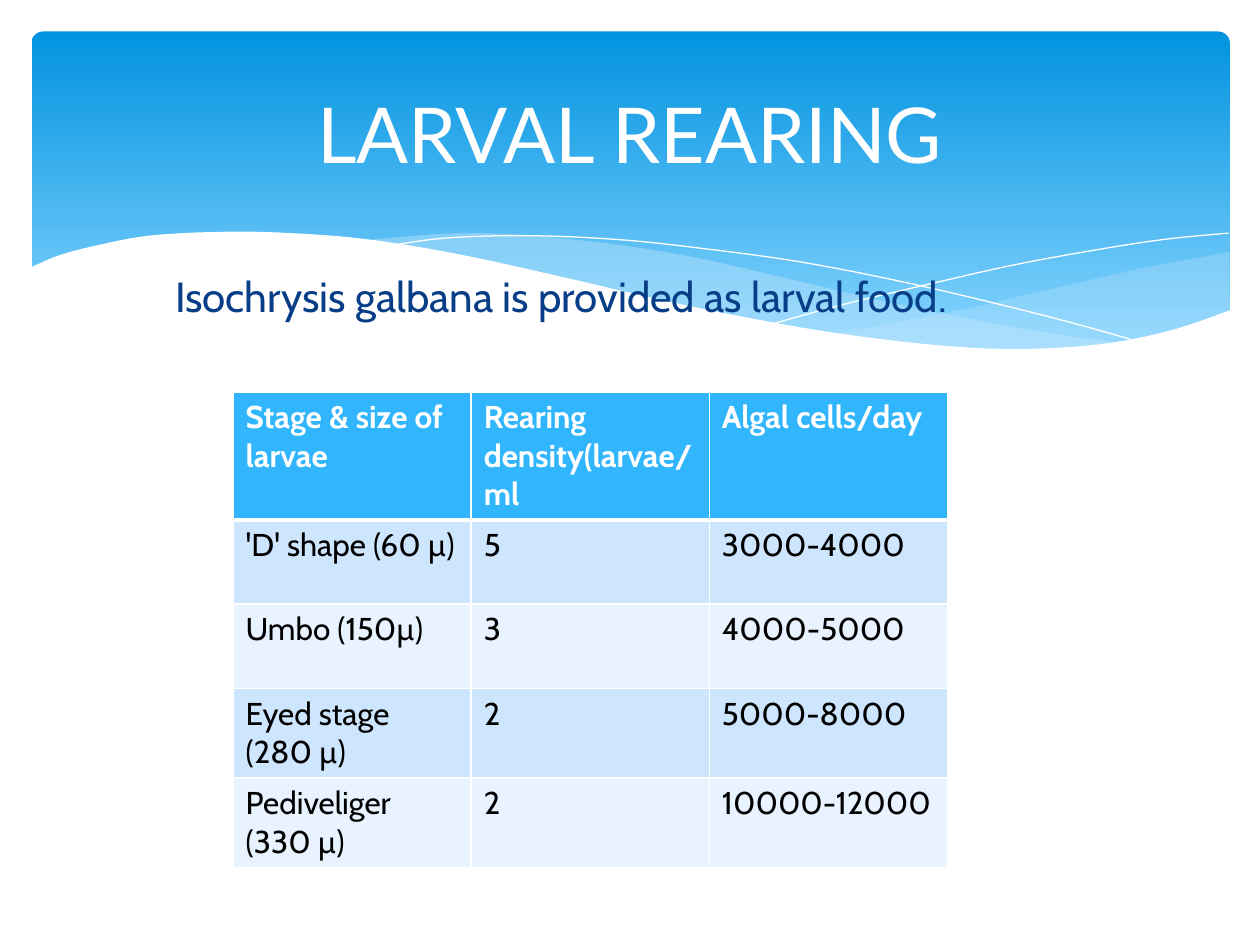
from lxml.etree import SubElement
from pptx import Presentation
from pptx.dml.color import RGBColor
from pptx.enum.shapes import MSO_SHAPE
from pptx.enum.text import MSO_ANCHOR, MSO_AUTO_SIZE, PP_ALIGN
from pptx.oxml.ns import qn
from pptx.util import Inches, Pt

WHITE = RGBColor(0xFF, 0xFF, 0xFF)
BLACK = RGBColor(0, 0, 0)
NAVY = RGBColor(0x07, 0x3E, 0x87)
SKY_DARK = RGBColor(0x02, 0x93, 0xE0)
SKY_LIGHT = RGBColor(0x83, 0xD3, 0xFE)
MIST = RGBColor(0xC6, 0xE7, 0xFC)
HEADER = RGBColor(0x31, 0xB6, 0xFD)
BANDS = (RGBColor(0xE8, 0xF3, 0xFF), RGBColor(0xCE, 0xE5, 0xFE))

TITLE_FONT = {"name": "Lato", "size": Pt(44), "bold": False}
BODY_FONT = {"name": "Cabin", "size": Pt(24), "bold": False}
HEAD_FONT = {"name": "Cabin", "size": Pt(18), "bold": True}
CELL_FONT = {"name": "Cabin", "size": Pt(18), "bold": False}

# Each wave is a list of smooth edges, given by the points they pass through.
RIGHT_WAVE = [
    [(9.76, 2), (9.06, 2.13), (8.32, 2.3), (7.53, 2.48), (6.61, 2.65)],
    [(6.61, 2.65), (7.05, 2.71), (7.57, 2.76), (8.14, 2.78), (8.72, 2.74),
     (9.28, 2.63), (9.76, 2.47)],
]
MIDDLE_WAVE = [
    [(8.93, 2.73), (8.07, 2.6), (7.06, 2.4), (6.29, 2.22), (5.55, 2.05),
     (4.89, 1.94), (4.2, 1.87), (3.61, 1.85), (2.86, 1.91)],
    [(2.86, 1.91), (3.62, 2.03), (4.49, 2.22), (5.3, 2.4), (6.01, 2.55),
     (6.65, 2.66), (7.36, 2.75), (7.96, 2.78), (8.48, 2.77), (8.93, 2.73)],
]
FALLING_LINE = [
    [(3.09, 1.95), (3.53, 1.89), (4.16, 1.87), (4.89, 1.9), (5.56, 1.97),
     (6.36, 2.08), (7.27, 2.26), (8.31, 2.51), (9.07, 2.72)],
]
RISING_LINE = [
    [(6.13, 2.57), (6.72, 2.41), (7.48, 2.23), (8.06, 2.1), (8.66, 1.99),
     (9.24, 1.9), (9.75, 1.85)],
]
FRONT_WAVE = [
    [(9.77, 2.46), (9.3, 2.62), (8.75, 2.73), (8.09, 2.77), (7.44, 2.74),
     (6.68, 2.65), (6.03, 2.54), (5.29, 2.39), (4.47, 2.2), (3.65, 2.02),
     (2.92, 1.9), (2.3, 1.85), (1.77, 1.84), (1.19, 1.87), (0.76, 1.95),
     (0.46, 2.03), (0.23, 2.13)],
    [(0.23, 3.29), (9.77, 3.29)],
]

ROWS = [
    ("Stage & size of larvae", "Rearing density(larvae/ml", "Algal cells/day"),
    ("'D' shape (60 µ)", "5", "3000-4000"),
    ("Umbo (150µ)", "3", "4000-5000"),
    ("Eyed stage (280 µ)", "2", "5000-8000"),
    ("Pediveliger (330 µ)", "2", "10000-12000"),
]


def smooth(knots, steps=6):
    """Points of a Catmull-Rom curve through the knots."""
    ends = [knots[0], *knots, knots[-1]]
    points = [knots[0]]
    for quad in zip(ends, ends[1:], ends[2:], ends[3:]):
        for t in (i / steps for i in range(1, steps + 1)):
            points.append(tuple(
                (2 * b + (c - a) * t + (2 * a - 5 * b + 4 * c - d) * t ** 2
                 + (3 * b - a - 3 * c + d) * t ** 3) / 2
                for a, b, c, d in zip(*quad)))
    return points


def add_curve(slide, edges, fill=None, alpha=100):
    """A filled wave, or an open white hairline when no fill is given."""
    points = [(Inches(x), Inches(y)) for edge in edges for x, y in smooth(edge)]
    builder = slide.shapes.build_freeform(*points[0])
    builder.add_line_segments(points[1:], close=fill is not None)
    sp = builder.convert_to_shape()
    sp.shadow.inherit = False
    if fill is None:
        sp.fill.background()
        sp.line.color.rgb = WHITE
        sp.line.width = Pt(0)
        return
    sp.fill.solid()
    sp.fill.fore_color.rgb = fill
    sp.line.fill.background()
    if alpha < 100:
        color = sp._element.spPr.find(f"{qn('a:solidFill')}/{qn('a:srgbClr')}")
        SubElement(color, qn("a:alpha"), val=str(alpha * 1000))


def add_banner(slide):
    sp = slide.shapes.add_shape(MSO_SHAPE.ROUNDED_RECTANGLE, Inches(0.25),
                                Inches(0.25), Inches(9.51), Inches(2.7))
    sp.adjustments[0] = 0.034
    sp.shadow.inherit = False
    sp.line.fill.background()
    sp.fill.gradient()
    sp.fill.gradient_angle = 270
    stops = ((0, SKY_DARK), (0.9, SKY_LIGHT))
    for stop, (position, color) in zip(sp.fill.gradient_stops, stops):
        stop.position = position
        stop.color.rgb = color


def write(tf, text, font, color, align=PP_ALIGN.LEFT):
    p = tf.paragraphs[0]
    p.alignment = align
    p.space_before = Pt(0)
    r = p.add_run()
    r.text = text
    for name, value in font.items():
        setattr(r.font, name, value)
    r.font.color.rgb = color


def place(slide, ph, box, anchor):
    """Position a placeholder in front of the waves and return its text frame."""
    slide.shapes._spTree.append(ph._element)
    for name, value in zip(("left", "top", "width", "height"), box):
        setattr(ph, name, Inches(value))
    tf = ph.text_frame
    tf.word_wrap = True
    tf.auto_size = MSO_AUTO_SIZE.NONE
    tf.vertical_anchor = anchor
    return tf


def add_body(slide, text):
    tf = place(slide, slide.placeholders[1], (1.22, 2.1, 7.84, 4.6), MSO_ANCHOR.TOP)
    tf.margin_left = Inches(0.17)
    pPr = tf.paragraphs[0]._p.get_or_add_pPr()
    pPr.set("marL", "0")
    pPr.set("indent", "0")
    SubElement(pPr, qn("a:buNone"))
    write(tf, text, BODY_FONT, NAVY)


def set_borders(cell, bottom_widths):
    """White cell borders; bottom_widths maps a side to a width other than 1 pt."""
    tcPr = cell._tc.get_or_add_tcPr()
    for i, side in enumerate(("lnL", "lnR", "lnT", "lnB")):
        width = Pt(bottom_widths.get(side, 1))
        ln = tcPr.makeelement(qn(f"a:{side}"), {"w": str(width)})
        SubElement(SubElement(ln, qn("a:solidFill")), qn("a:srgbClr"), val=str(WHITE))
        tcPr.insert(i, ln)


def add_feeding_table(slide):
    table = slide.shapes.add_table(len(ROWS), len(ROWS[0]), Inches(1.85), Inches(3.11),
                                   Inches(5.67), Inches(3.53)).table
    for i, row in enumerate(ROWS):
        header = i == 0
        table.rows[i].height = Inches(0.85 if header else 0.67)
        for j, text in enumerate(row):
            cell = table.cell(i, j)
            cell.fill.solid()
            cell.fill.fore_color.rgb = HEADER if header else BANDS[i % 2]
            write(cell.text_frame, text, HEAD_FONT if header else CELL_FONT,
                  WHITE if header else BLACK)
            set_borders(cell, {0: {"lnB": 3}, 1: {"lnT": 3}}.get(i, {}))


def main():
    prs = Presentation()
    prs.slide_width, prs.slide_height = Inches(10), Inches(7.5)
    slide = prs.slides.add_slide(prs.slide_layouts[1])
    add_banner(slide)
    add_curve(slide, RIGHT_WAVE, MIST, 29)
    add_curve(slide, MIDDLE_WAVE, MIST, 40)
    add_curve(slide, FALLING_LINE)
    add_curve(slide, RISING_LINE)
    add_curve(slide, FRONT_WAVE, WHITE)
    add_body(slide, "Isochrysis galbana is provided as larval food.")
    title = place(slide, slide.shapes.title, (0.5, 0.37, 9, 1.37), MSO_ANCHOR.MIDDLE)
    write(title, "LARVAL REARING", TITLE_FONT, WHITE, PP_ALIGN.CENTER)
    add_feeding_table(slide)
    prs.save("out.pptx")


if __name__ == "__main__":
    main()
